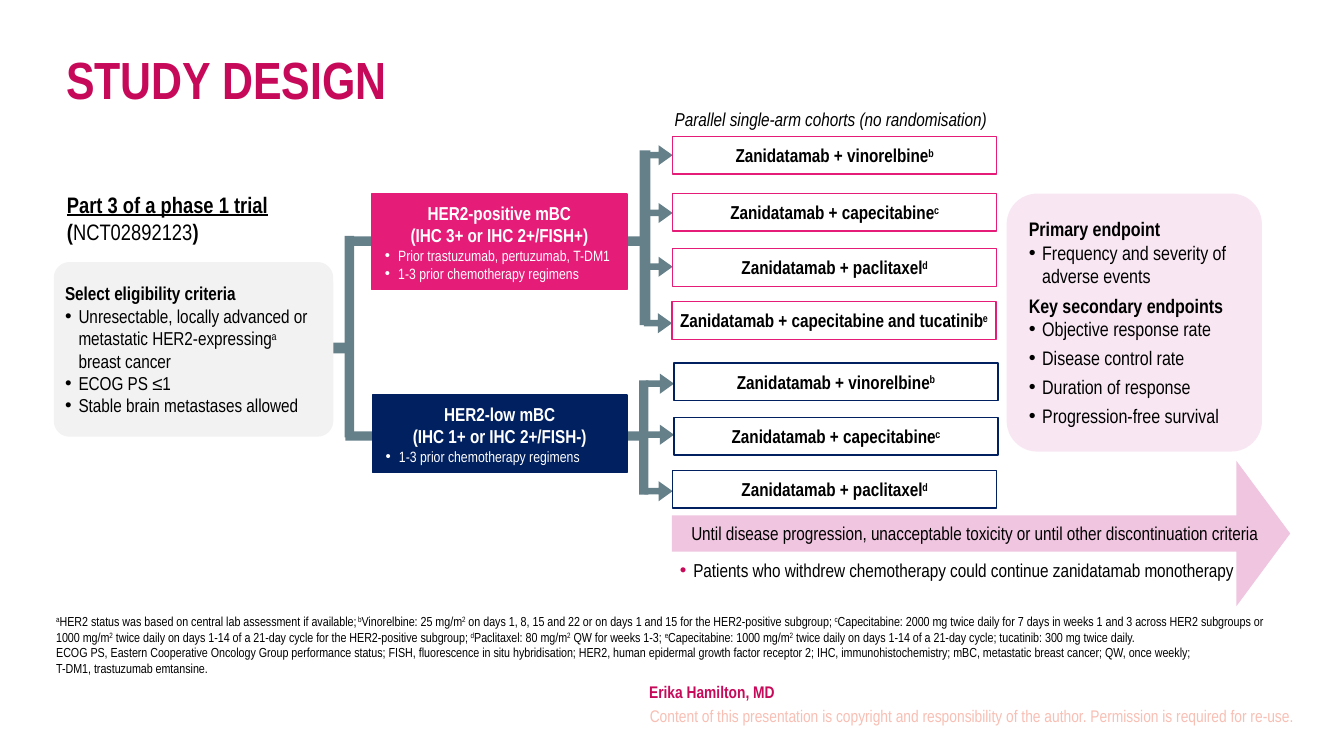
from dataclasses import dataclass, field

from lxml import etree
from pptx import Presentation
from pptx.dml.color import RGBColor
from pptx.enum.shapes import MSO_SHAPE
from pptx.enum.text import MSO_ANCHOR, PP_ALIGN
from pptx.oxml.ns import qn
from pptx.util import Pt

EMU_PER_PX = 4572
FONT = "Arial Narrow"

RECT = MSO_SHAPE.RECTANGLE
ROUNDED = MSO_SHAPE.ROUNDED_RECTANGLE
ARROW = MSO_SHAPE.RIGHT_ARROW
TOP = MSO_ANCHOR.TOP
MIDDLE = MSO_ANCHOR.MIDDLE
LEFT = PP_ALIGN.LEFT
CENTER = PP_ALIGN.CENTER
RIGHT = PP_ALIGN.RIGHT

BLACK = RGBColor(0x00, 0x00, 0x00)
WHITE = RGBColor(0xFF, 0xFF, 0xFF)
CRIMSON = RGBColor(0xC7, 0x09, 0x5A)
PINK = RGBColor(0xE6, 0x1D, 0x78)
NAVY = RGBColor(0x00, 0x20, 0x60)
SLATE = RGBColor(0x66, 0x80, 0x89)
ORCHID = RGBColor(0xEF, 0xC5, 0xDF)
PALE_GREY = RGBColor(0xF2, 0xF2, 0xF2)
SALMON = RGBColor(0xF8, 0xBF, 0xB4)

VINORELBINE = "Zanidatamab + vinorelbine^b^"
CAPECITABINE = "Zanidatamab + capecitabine^c^"
PACLITAXEL = "Zanidatamab + paclitaxel^d^"
TUCATINIB = "Zanidatamab + capecitabine and tucatinib^e^"

FOOTNOTES = (
    "^a^HER2 status was based on central lab assessment if available;^ b^Vinorelbine: 25 mg/m^2^ on days 1, 8, "
    "15 and 22 or on days 1 and 15 for the HER2-positive subgroup; ^c^Capecitabine: 2000 mg twice daily for "
    "7 days in weeks 1 and 3 across HER2 subgroups or 1000 mg/m^2^ twice daily on days 1-14 of a 21-day cycle "
    "for the HER2-positive subgroup; ^d^Paclitaxel: 80 mg/m^2^ QW for weeks 1-3; ^e^Capecitabine: 1000 mg/m^2^ "
    "twice daily on days 1-14 of a 21-day cycle; tucatinib: 300 mg twice daily."
)
ABBREVIATIONS = (
    "ECOG PS, Eastern Cooperative Oncology Group performance status; FISH, fluorescence in situ hybridisation; "
    "HER2, human epidermal growth factor receptor 2; IHC, immunohistochemistry; mBC, metastatic breast cancer; "
    "QW, once weekly; \nT-DM1, trastuzumab emtansine."
)


@dataclass
class Para:
    runs: list
    layout: dict = field(default_factory=dict)
    indent: tuple = (0, 0)
    marker: bool = False
    marker_color: RGBColor = None


def px(length):
    return length * EMU_PER_PX


def line(text, align=LEFT, indent=(0, 0), spacing=1.0, **font):
    return Para([(text, font)], {"alignment": align, "line_spacing": spacing}, indent)


def bullet(text, after=0, marker_color=None, **font):
    return Para([(text, font)], {"space_after": Pt(after)}, (20, -20), True, marker_color)


def add_marker(props, color):
    if color is not None:
        holder = etree.SubElement(props, qn("a:buClr"))
        etree.SubElement(holder, qn("a:srgbClr")).set("val", str(color))
    etree.SubElement(props, qn("a:buFont")).set("typeface", "Arial")
    etree.SubElement(props, qn("a:buChar")).set("char", "•")


def add_runs(paragraph, text, font, color):
    for row, row_text in enumerate(text.split("\n")):
        if row:
            paragraph.add_line_break()
        for position, piece in enumerate(row_text.split("^")):
            if not piece:
                continue
            run = paragraph.add_run()
            run.text = piece
            for name, value in font.items():
                setattr(run.font, name, value)
            run.font.color.rgb = color
            if position % 2:
                run._r.get_or_add_rPr().set("baseline", "30000")


def write(holder, paras, size, color=BLACK, insets=(20, 10, 20, 10), anchor=MIDDLE, wrap=True):
    frame = holder.text_frame
    left, top, right, bottom = map(px, insets)
    settings = {"margin_left": left, "margin_top": top, "margin_right": right, "margin_bottom": bottom,
                "vertical_anchor": anchor, "word_wrap": wrap}
    for name, value in settings.items():
        setattr(frame, name, value)
    for number, para in enumerate(paras):
        paragraph = frame.add_paragraph() if number else frame.paragraphs[0]
        props = paragraph._p.get_or_add_pPr()
        margin, first = para.indent
        props.set("marL", str(px(margin)))
        props.set("indent", str(px(first)))
        if para.marker:
            add_marker(props, para.marker_color)
        for name, value in {"alignment": LEFT, **para.layout}.items():
            setattr(paragraph, name, value)
        for text, font in para.runs:
            add_runs(paragraph, text, {"name": FONT, "size": Pt(size), **font}, color)


def add_block(slide, kind, box, fill, outline=None, adjustments=(), opacity=None):
    block = slide.shapes.add_shape(kind, *map(px, box))
    block.shadow.inherit = False
    block.fill.solid()
    block.fill.fore_color.rgb = fill
    if opacity is not None:
        tint = block._element.spPr.find(qn("a:solidFill"))[0]
        etree.SubElement(tint, qn("a:alpha")).set("val", str(opacity * 1000))
    if outline is None:
        block.line.fill.background()
    else:
        block.line.color.rgb = outline
        block.line.width = Pt(0.75)
    for index, value in enumerate(adjustments):
        block.adjustments[index] = value
    return block


def add_text(slide, box, paras, size, **options):
    write(slide.shapes.add_textbox(*map(px, box)), paras, size, **{"anchor": TOP, **options})


def add_brackets(slide):
    for box in ((514, 642, 440, 14), (524, 352, 430, 14), (472, 510, 54, 16),
                (513, 351, 14, 300), (952, 224, 16, 260), (951, 566, 14, 170)):
        add_block(slide, RECT, box, SLATE)


def add_cohorts(slide, outline, cohorts):
    for left, top, arrow_top, label in cohorts:
        add_block(slide, ARROW, (left - 42, arrow_top, 42, 30), SLATE, adjustments=(0.32, 0.7))
        cohort = add_block(slide, RECT, (left, top, 482, 56), WHITE, outline)
        write(cohort, [line(label, CENTER, bold=True)], 10, insets=(0, 10, 0, 10))


def add_population(slide, box, color, name, test, criteria):
    population = add_block(slide, RECT, box, color, color)
    headings = [line(text, CENTER, bold=True) for text in (name, test)]
    write(population, headings + [bullet(text, size=Pt(8)) for text in criteria], 10, WHITE)


def add_eligibility(slide):
    panel = add_block(slide, ROUNDED, (80, 390, 416, 260), PALE_GREY, adjustments=(0.09,))
    criteria = ("Unresectable, locally advanced or metastatic HER2-expressing^a^ breast cancer",
                "ECOG PS ≤1", "Stable brain metastases allowed")
    write(panel, [line("Select eligibility criteria", bold=True), *map(bullet, criteria)], 10,
          insets=(10, 10, 10, 10))


def add_endpoints(slide):
    panel = add_block(slide, ROUNDED, (1498, 288, 380, 384), ORCHID, adjustments=(0.12,), opacity=40)
    secondary = ("Objective response rate", "Disease control rate", "Duration of response",
                 "Progression-free survival")
    write(panel, [line("Primary endpoint", bold=True),
                  bullet("Frequency and severity of adverse events", 3),
                  line("Key secondary endpoints", bold=True),
                  *(bullet(text, 3) for text in secondary)], 10.5)


def add_duration(slide):
    duration = add_block(slide, ARROW, (1000, 686, 920, 216), ORCHID, adjustments=(0.25, 0.37))
    write(duration, [line("Until disease progression, unacceptable toxicity or until other discontinuation criteria",
                          CENTER)], 10, wrap=False)


def main():
    deck = Presentation()
    deck.slide_width, deck.slide_height = px(2000), px(1125)
    slide = deck.slides.add_slide(deck.slide_layouts[6])

    add_text(slide, (958, 1050, 986, 32),
             [line("Content of this presentation is copyright and responsibility of the author. "
                   "Permission is required for re-use.", RIGHT)], 9, color=SALMON, insets=(0, 0, 20, 0))
    add_text(slide, (64, 903, 1868, 114), [line(FOOTNOTES), line(ABBREVIATIONS)], 7)
    add_brackets(slide)
    add_duration(slide)
    add_endpoints(slide)
    add_eligibility(slide)
    add_population(slide, (553, 289, 380, 142), PINK, "HER2-positive mBC", "(IHC 3+ or IHC 2+/FISH+)",
                   ("Prior trastuzumab, pertuzumab, T-DM1", "1-3 prior chemotherapy regimens"))
    add_population(slide, (554, 588, 379, 115), NAVY, "HER2-low mBC", "(IHC 1+ or IHC 2+/FISH-)",
                   ("1-3 prior chemotherapy regimens",))
    add_cohorts(slide, PINK, ((1001, 203, 216, VINORELBINE), (1001, 288, 302, CAPECITABINE),
                              (1001, 370, 382, PACLITAXEL), (1000, 449, 466, TUCATINIB)))
    add_cohorts(slide, NAVY, ((1003, 540, 556, VINORELBINE), (1003, 621, 632, CAPECITABINE),
                              (1001, 700, 716, PACLITAXEL)))
    add_text(slide, (992, 822, 864, 54),
             [bullet("Patients who withdrew chemotherapy could continue zanidatamab monotherapy", 6, CRIMSON)], 10)
    add_text(slide, (80, 275, 440, 100),
             [Para([("Part 3 of a phase 1 trial ", {"bold": True, "underline": True}), ("(", {"bold": True}),
                    ("NCT02892123", {}), (")", {"bold": True})])], 12)
    add_text(slide, (958, 150, 556, 54),
             [line("Parallel single-arm cohorts (no randomisation)", CENTER, italic=True)], 10,
             insets=(10, 10, 10, 10), anchor=MIDDLE)
    add_text(slide, (79, 79, 1840, 94), [line("STUDY DESIGN", spacing=0.8, bold=True)], 28, color=CRIMSON)
    add_text(slide, (916, 1011, 612, 38), [line("Erika Hamilton, MD", indent=(100, -50), bold=True)], 9,
             color=CRIMSON, insets=(0, 0, 0, 0), anchor=MIDDLE)
    deck.save("out.pptx")


if __name__ == "__main__":
    main()
